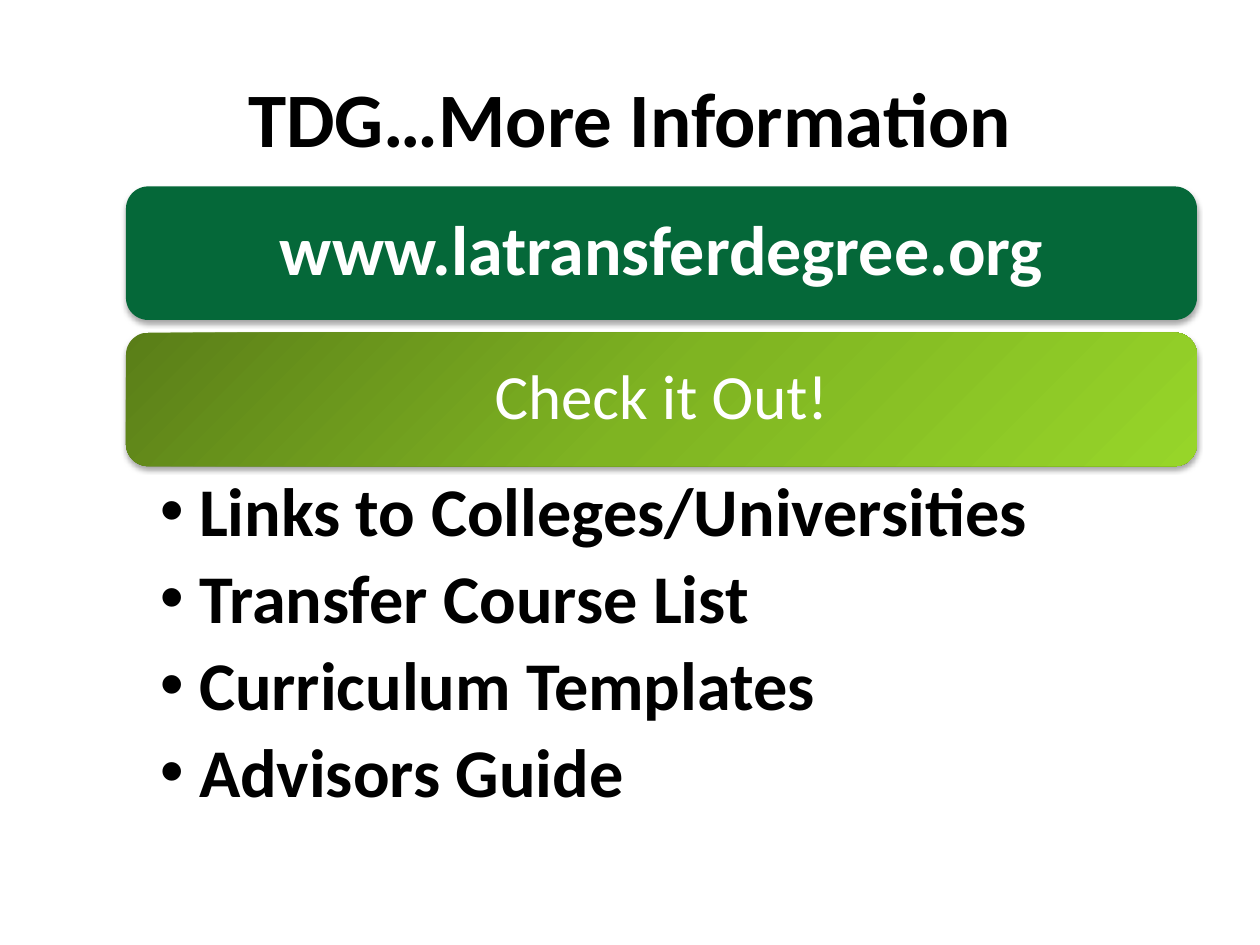
from copy import deepcopy

from lxml.etree import SubElement
from pptx import Presentation
from pptx.dml.color import RGBColor
from pptx.enum.shapes import MSO_SHAPE
from pptx.enum.text import MSO_ANCHOR, PP_ALIGN
from pptx.oxml.ns import qn
from pptx.util import Inches, Pt

BLACK = RGBColor(0x00, 0x00, 0x00)
WHITE = RGBColor(0xFF, 0xFF, 0xFF)
DARK_GREEN = RGBColor(0x05, 0x68, 0x39)
LIME_STOPS = [
    (0, RGBColor(0x5A, 0x7E, 0x18)),
    (0.5, RGBColor(0x7F, 0xB4, 0x22)),
    (1, RGBColor(0x97, 0xD5, 0x29)),
]


def write(para, text, size, color, bold=False, align=PP_ALIGN.CENTER, spacing=0.9, after=0):
    """Put text in a paragraph and format it."""
    para.alignment = align
    para.line_spacing = spacing
    para.space_after = Pt(after)
    span = para.add_run()
    span.text = text
    span.font.name = "Calibri"
    span.font.size = Pt(size)
    span.font.bold = bold
    span.font.color.rgb = color


def add_soft_shadow(shape):
    shape.shadow.inherit = False
    effects = shape._element.spPr.find(qn("a:effectLst"))
    shadow = SubElement(effects, qn("a:outerShdw"), blurRad=str(Pt(3.1)), dist=str(Pt(1.8)),
                        dir="5400000", rotWithShape="0")
    tint = SubElement(shadow, qn("a:srgbClr"), val="000000")
    SubElement(tint, qn("a:alpha"), val="35000")


deck = Presentation()
deck.slide_width = Inches(10)
deck.slide_height = Inches(7.5)
page = deck.slides.add_slide(deck.slide_layouts[5])

# Title
title = page.shapes.title
title.left, title.top = Inches(0.5), Inches(0.3)
title.width, title.height = Inches(9), Inches(1.25)
title.text_frame.vertical_anchor = MSO_ANCHOR.MIDDLE
write(title.text_frame.paragraphs[0], "TDG…More Information", 44, BLACK, bold=True, spacing=1.0)

# Two banners
banners = []
for top, text, size, bold, inset in [
    (1.48, "www.latransferdegree.org", 40, True, 0.17),
    (2.64, "Check it Out!", 36, False, 0.15),
]:
    banner = page.shapes.add_shape(
        MSO_SHAPE.ROUNDED_RECTANGLE, Inches(1), Inches(top), Inches(8.5), Inches(1.06))
    banner.line.fill.background()
    add_soft_shadow(banner)
    frame = banner.text_frame
    frame.word_wrap = True
    frame.vertical_anchor = MSO_ANCHOR.MIDDLE
    frame.margin_left = frame.margin_right = Inches(inset)
    frame.margin_top = frame.margin_bottom = Inches(inset)
    write(frame.paragraphs[0], text, size, WHITE, bold=bold)
    banners.append(banner)

address_banner, invitation_banner = banners
address_banner.fill.solid()
address_banner.fill.fore_color.rgb = DARK_GREEN

lime = invitation_banner.fill
lime.gradient()
lime.gradient_angle = 315
stop_list = invitation_banner._element.spPr.find(qn("a:gradFill")).find(qn("a:gsLst"))
stop_list.append(deepcopy(stop_list[0]))
for stop, (position, color) in zip(lime.gradient_stops, LIME_STOPS):
    stop.position = position
    stop.color.rgb = color

# Bulleted list
box = page.shapes.add_textbox(Inches(1), Inches(3.72), Inches(8.5), Inches(2.94))
frame = box.text_frame
frame.word_wrap = True
frame.margin_left, frame.margin_right = Inches(0.27), Inches(0.39)
frame.margin_top = frame.margin_bottom = Inches(0.07)
topics = ["Links to Colleges/Universities", "Transfer Course List",
          "Curriculum Templates", "Advisors Guide"]
for index, topic in enumerate(topics):
    para = frame.add_paragraph() if index else frame.paragraphs[0]
    properties = para._p.get_or_add_pPr()
    properties.set("marL", str(Inches(0.31)))
    properties.set("indent", str(-Inches(0.31)))
    SubElement(properties, qn("a:buFont"), typeface="Arial")
    SubElement(properties, qn("a:buChar"), char="•")
    write(para, topic, 39, BLACK, bold=True, align=PP_ALIGN.LEFT, after=7.5)

deck.save("out.pptx")
